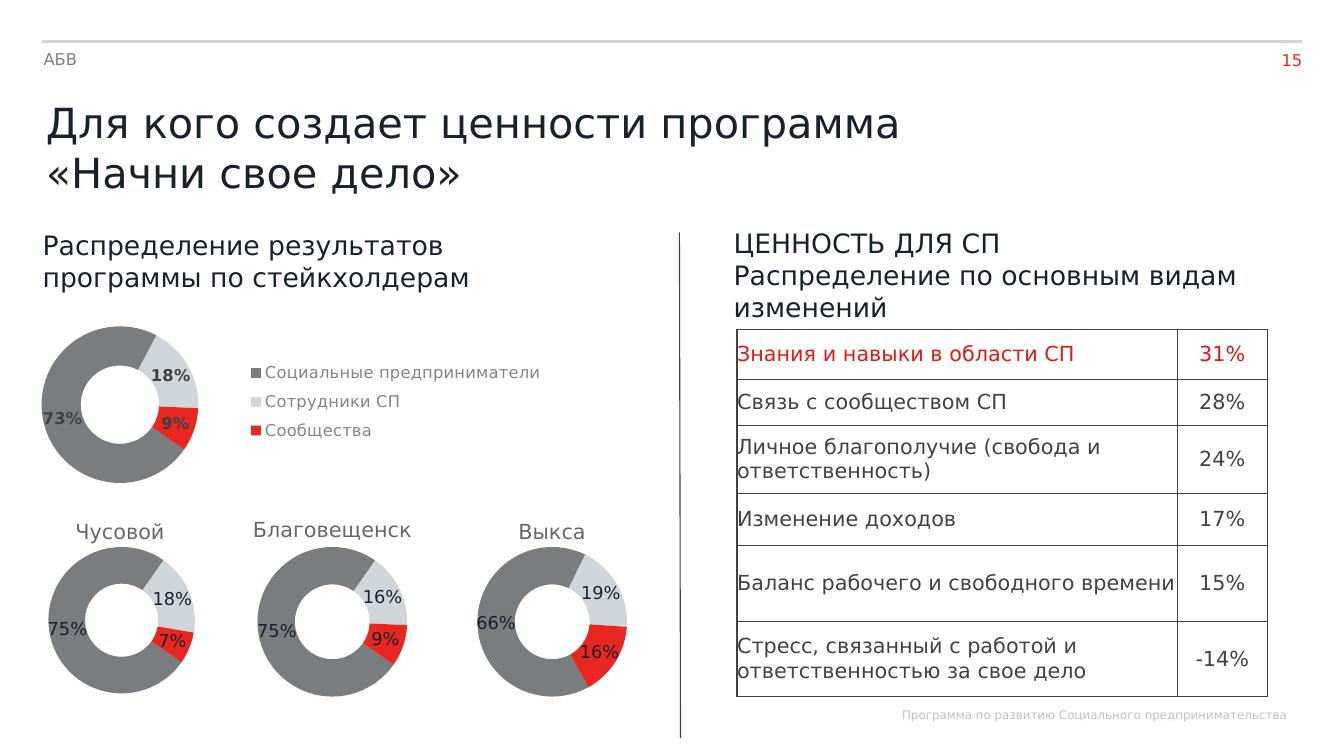
from dataclasses import dataclass

from lxml.etree import SubElement
from pptx import Presentation
from pptx.chart.data import CategoryChartData
from pptx.dml.color import RGBColor
from pptx.enum.chart import XL_CHART_TYPE, XL_LEGEND_POSITION
from pptx.enum.shapes import MSO_CONNECTOR
from pptx.enum.text import MSO_ANCHOR, MSO_AUTO_SIZE, PP_ALIGN
from pptx.oxml import parse_xml
from pptx.oxml.ns import nsdecls, qn
from pptx.util import Inches, Pt


@dataclass(frozen=True)
class Theme:
    font: str = "DejaVu Sans"
    ink: str = "19212C"
    dark: str = "424242"
    city: str = "676767"
    muted: str = "7F8183"
    legend: str = "848484"
    faint: str = "BFC0C1"
    rule: str = "D1D5DA"
    accent: str = "E92721"
    highlight: str = "E41910"
    slices: tuple = ("7A7D7F", "D0D5DA", "E92721")
    title_size: int = 28
    heading_size: int = 18
    text_size: int = 14
    label_size: int = 12
    small_size: int = 11
    footer_size: int = 8


THEME = Theme()
STAKEHOLDERS = ["Социальные предприниматели", "Сотрудники СП", "Сообщества"]
# city, label box, chart box, plot area as fractions, start angle, values
CITIES = [
    ("Чусовой", (0.39, 4.82, 1.47, 0.34), (0.41, 5.1, 2.18, 1.56),
     (0.02, 0.01, 0.63, 0.9), 125, (75, 18, 7)),
    ("Благовещенск", (2.29, 4.8, 1.65, 0.34), (1.91, 5.13, 2.71, 1.56),
     (0.13, 0, 0.63, 0.9), 125, (75, 16, 9)),
    ("Выкса", (4.63, 4.82, 1.09, 0.34), (4.37, 5.13, 2.41, 1.56),
     (0.02, 0, 0.63, 0.9), 151, (66, 19, 16)),
]
# change, share, row height
CHANGES = [
    ("Знания и навыки в области СП", "31%", 0.47),
    ("Связь с сообществом СП", "28%", 0.43),
    ("Личное благополучие (свобода и ответственность)", "24%", 0.64),
    ("Изменение доходов", "17%", 0.49),
    ("Баланс рабочего и свободного времени", "15%", 0.71),
    ("Стресс, связанный с работой и ответственностью за свое дело", "-14%", 0.7),
]


def inches(box):
    return [Inches(length) for length in box]


def style_font(font, size, color, bold=False):
    font.name, font.size, font.bold = THEME.font, Pt(size), bold
    font.color.rgb = RGBColor.from_string(color)


def write(frame, text, size=THEME.text_size, color=THEME.ink,
          align=PP_ALIGN.LEFT, anchor=MSO_ANCHOR.TOP, margins=(0.1, 0.05)):
    """Fill a text frame, one paragraph for each line of text."""
    frame.word_wrap = True
    frame.auto_size = MSO_AUTO_SIZE.NONE
    frame.vertical_anchor = anchor
    frame.margin_left = frame.margin_right = Inches(margins[0])
    frame.margin_top = frame.margin_bottom = Inches(margins[1])
    for index, line in enumerate(text.split("\n")):
        para = frame.paragraphs[0] if index == 0 else frame.add_paragraph()
        para.alignment = align
        span = para.add_run()
        span.text = line
        style_font(span.font, size, color)


def add_text(page, box, text, **style):
    write(page.shapes.add_textbox(*inches(box)).text_frame, text, **style)


def add_line(page, start, end, color, width):
    line = page.shapes.add_connector(MSO_CONNECTOR.STRAIGHT, *inches(start + end))
    line.line.color.rgb = RGBColor.from_string(color)
    line.line.width = Pt(width)
    SubElement(line.element.spPr, qn("a:effectLst"))


def manual_layout(area, inner=False):
    """Return a chart layout element for an area given in fractions."""
    target = '<c:layoutTarget val="inner"/>' if inner else ""
    modes = '<c:xMode val="edge"/><c:yMode val="edge"/>'
    sizes = "".join(f'<c:{key} val="{value}"/>' for key, value in zip("xywh", area))
    return parse_xml(f'<c:layout {nsdecls("c")}><c:manualLayout>{target}{modes}{sizes}'
                     '</c:manualLayout></c:layout>')


def add_doughnut(page, box, plot_area, start, hole, categories, values,
                 label_size=THEME.label_size, label_color=THEME.ink, bold=False):
    data = CategoryChartData()
    data.categories = categories
    data.add_series("Series 1", values)
    chart = page.shapes.add_chart(XL_CHART_TYPE.DOUGHNUT, *inches(box), data).chart
    chart.has_title = chart.has_legend = False
    style_font(chart.font, THEME.small_size, THEME.dark)
    plot = chart.plots[0]
    plot.vary_by_categories = True
    series = plot.series[0]
    for index, color in enumerate(THEME.slices):
        fill = series.points[index].format.fill
        fill.solid()
        fill.fore_color.rgb = RGBColor.from_string(color)
    labels = series.data_labels
    labels.show_value = True
    labels.number_format, labels.number_format_is_linked = '0"%"', False
    style_font(labels.font, label_size, label_color, bold)

    area = chart.element.find(".//" + qn("c:plotArea"))
    for layout in area.findall(qn("c:layout")):
        area.remove(layout)
    area.insert(0, manual_layout(plot_area, inner=True))
    area.find(".//" + qn("c:firstSliceAng")).set("val", str(start))
    area.find(".//" + qn("c:holeSize")).set("val", str(hole))
    return chart


def add_legend(chart, area):
    chart.has_legend = True
    chart.legend.position = XL_LEGEND_POSITION.RIGHT
    chart.legend.include_in_layout = False
    style_font(chart.legend.font, THEME.small_size, THEME.legend)
    legend = chart.element.find(".//" + qn("c:legend"))
    for layout in legend.findall(qn("c:layout")):
        legend.remove(layout)
    legend.find(qn("c:legendPos")).addnext(manual_layout(area))


def border_cell(cell):
    properties = cell._tc.get_or_add_tcPr()
    for index, side in enumerate(("lnL", "lnR", "lnT", "lnB")):
        properties.insert(index, parse_xml(
            f'<a:{side} {nsdecls("a")} w="{Pt(1)}"><a:solidFill>'
            f'<a:srgbClr val="{THEME.dark}"/></a:solidFill></a:{side}>'))


def add_changes_table(page, left, top, widths):
    heights = [height for _, _, height in CHANGES]
    box = (left, top, sum(widths), sum(heights))
    table = page.shapes.add_table(len(CHANGES), len(widths), *inches(box)).table
    table.first_row = table.horz_banding = False
    for column, width in zip(table.columns, widths):
        column.width = Inches(width)
    for row, (change, share, height) in enumerate(CHANGES):
        table.rows[row].height = Inches(height)
        color = THEME.dark if row else THEME.highlight
        for column, (text, align) in enumerate(
                ((change, PP_ALIGN.LEFT), (share, PP_ALIGN.CENTER))):
            cell = table.cell(row, column)
            cell.fill.background()
            cell.vertical_anchor = MSO_ANCHOR.MIDDLE
            cell.margin_left = cell.margin_right = 0
            cell.margin_top = cell.margin_bottom = 0
            para = cell.text_frame.paragraphs[0]
            para.alignment = align
            span = para.add_run()
            span.text = text
            style_font(span.font, THEME.text_size, color)
            border_cell(cell)


def add_frame(page):
    """Place the header, title and footer."""
    add_line(page, (0.39, 0.39), (12.21, 0.39), THEME.rule, 1.5)
    add_text(page, (11.48, 0.41, 0.73, 0.3), "15", size=THEME.small_size,
             color=THEME.accent, align=PP_ALIGN.RIGHT,
             anchor=MSO_ANCHOR.MIDDLE, margins=(0, 0))
    add_text(page, (0.31, 0.41, 2.68, 0.3), "АБВ",
             size=THEME.small_size, color=THEME.muted)
    title = page.shapes.title
    title.left, title.top, title.width, title.height = inches((0.33, 0.86, 9.06, 1.04))
    write(title.text_frame, "Для кого создает ценности программа «Начни свое дело»",
          size=THEME.title_size)
    add_text(page, (7.92, 6.59, 4.25, 0.39),
             "Программа по развитию Социального предпринимательства",
             size=THEME.footer_size, color=THEME.faint, align=PP_ALIGN.RIGHT)


def add_stakeholders(page):
    add_text(page, (0.28, 2.09, 5.3, 0.73),
             "Распределение результатов программы по стейкхолдерам",
             size=THEME.heading_size, margins=(0.12, 0.06))
    chart = add_doughnut(page, (-0.69, 2.95, 5.95, 1.86), (0.09, 0.06, 0.43, 0.79),
                         125, 39, STAKEHOLDERS, (73, 18, 9),
                         label_size=THEME.small_size, label_color=THEME.dark, bold=True)
    add_legend(chart, (0.5, 0.2, 0.48, 0.48))
    for city, label_box, chart_box, plot_area, start, values in CITIES:
        add_doughnut(page, chart_box, plot_area, start, 36, ["1", "2", "3"], values)
        add_text(page, label_box, city, color=THEME.city,
                 align=PP_ALIGN.CENTER, margins=(0, 0.05))


def add_value(page):
    add_text(page, (6.78, 2.08, 5.2, 1.01),
             "ЦЕННОСТЬ ДЛЯ СП\nРаспределение по основным видам изменений",
             size=THEME.heading_size)
    add_changes_table(page, 6.91, 3.09, (4.13, 0.84))


def main():
    deck = Presentation()
    deck.slide_width, deck.slide_height = inches((12.6, 7.09))
    page = deck.slides.add_slide(deck.slide_layouts.get_by_name("Title Only"))
    add_frame(page)
    add_stakeholders(page)
    add_line(page, (6.37, 2.18), (6.38, 6.92), THEME.dark, 0.75)
    add_value(page)
    deck.save("out.pptx")


if __name__ == "__main__":
    main()
